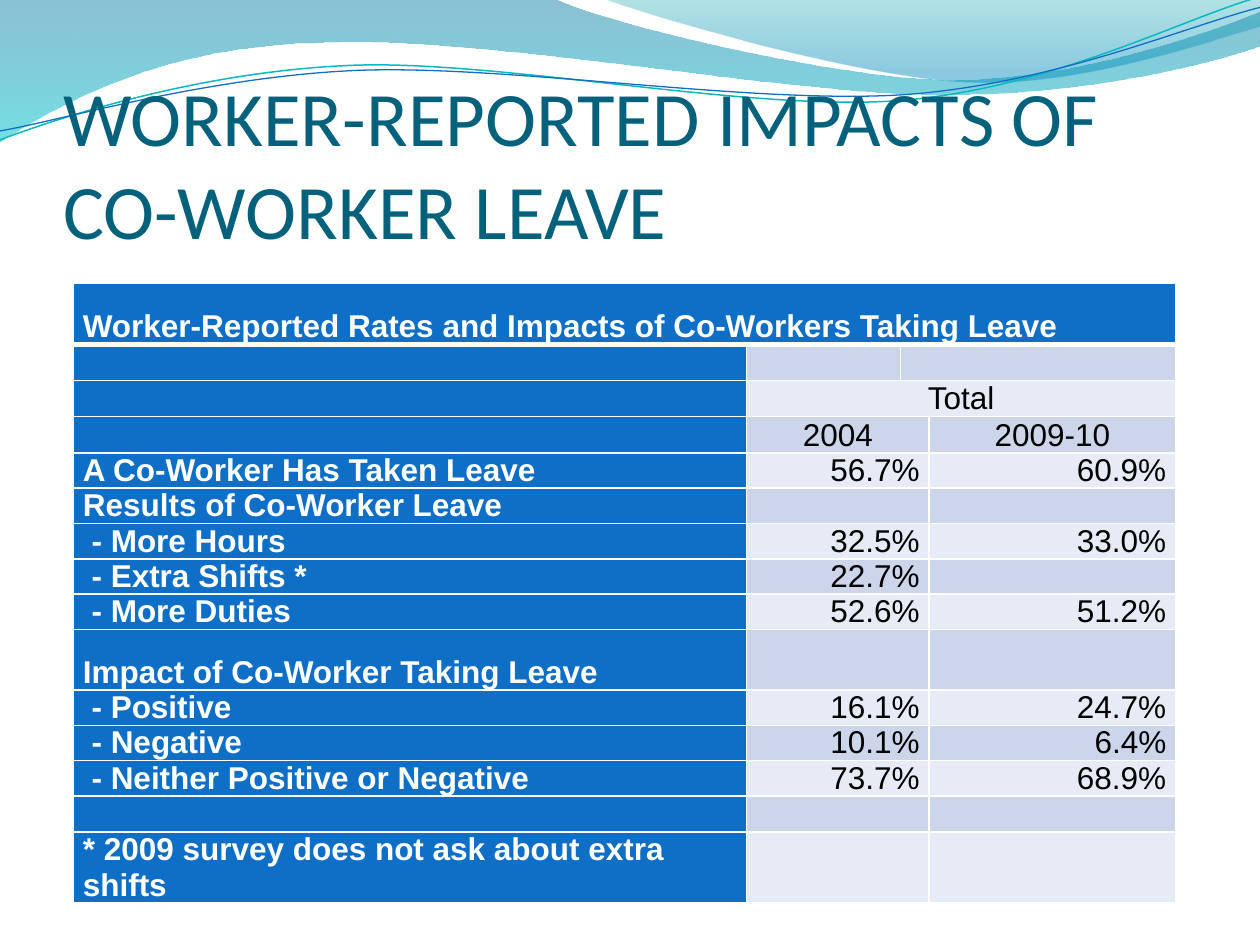
import lxml.etree
import pptx
import pptx.dml.color
import pptx.enum.text
import pptx.oxml.ns
import pptx.util

Cm, Pt = pptx.util.Cm, pptx.util.Pt
ALIGN = pptx.enum.text.PP_ALIGN
ANCHOR = pptx.enum.text.MSO_ANCHOR
qn = pptx.oxml.ns.qn

BLUE, WHITE, BLACK = "0F6FC6", "FFFFFF", "000000"
BANDS = ("E7EBF5", "CCD5EA")

# Outlines in cm: a pair is a straight step, six numbers are a Bezier curve.
FILLED_WAVES = [
    {"outline": [(0, -0.03), (11.18, -0.03),
                 (12.09, 0.43, 16.87, 1.6, 19.25, 1.6),
                 (21.67, 1.6, 24.33, 0.66, 25.4, 0.23), (25.43, 0.91),
                 (24.97, 1.12, 22.1, 1.93, 18.95, 1.91),
                 (15.8, 1.91, 9.7, 0.71, 6.53, 0.86),
                 (3.28, 0.89, 1.17, 2.11, -0.03, 2.87)],
     "stops": [(0, "0074A1", 45), (1, "00C6CF", 55)]},
    {"outline": [(12.17, -0.03),
                 (12.93, 0.28, 17.32, 1.57, 19.53, 1.65),
                 (21.74, 1.75, 24.41, 0.81, 25.4, 0.53), (25.4, 0)],
     "stops": [(0, "00A1A9", 30), (0.8, "008BBF", 45)]},
]
WAVE_LINES = [
    {"outline": [(0, 2.82), (1.22, 2.36, 4.01, 1.45, 7.04, 1.32),
                 (10.03, 1.19, 15.06, 2.26, 18.11, 2.03),
                 (21.16, 1.8, 23.83, 0.38, 25.35, -0.05)],
     "color": "0AB8BF", "width": 0.85},
    {"outline": [(0, 2.64), (1.19, 2.44, 4.17, 1.55, 7.19, 1.42),
                 (10.24, 1.3, 15.16, 2.11, 18.21, 1.91),
                 (21.23, 1.7, 23.9, 0.53, 25.4, 0.15)],
     "color": BLUE, "width": 0.75},
]

COLUMN_WIDTHS = (13.57, 3.1, 0.58, 4.97)
LOW_ROW, TALL_ROW, UNLABELLED_ROW = 0.69, 1.22, 0.73
TALL_ROWS = (0, 9, 14)
ROWS = [
    ("Worker-Reported Rates and Impacts of Co-Workers Taking Leave", "", ""),
    ("", "", ""),
    ("", "Total", ""),
    ("", "2004", "2009-10"),
    ("A Co-Worker Has Taken Leave", "56.7%", "60.9%"),
    ("Results of Co-Worker Leave", "", ""),
    (" - More Hours", "32.5%", "33.0%"),
    (" - Extra Shifts *", "22.7%", ""),
    (" - More Duties", "52.6%", "51.2%"),
    ("Impact of Co-Worker Taking Leave", "", ""),
    (" - Positive", "16.1%", "24.7%"),
    (" - Negative", "10.1%", "6.4%"),
    (" - Neither Positive or Negative", "73.7%", "68.9%"),
    ("", "", ""),
    ("* 2009 survey does not ask about extra shifts", "", ""),
]
# First and last column of the merged cells; other rows join columns 1 and 2.
MERGES = {0: (0, 3), 1: (2, 3), 2: (1, 3)}


def rgb(code):
    return pptx.dml.color.RGBColor.from_string(code)


def set_values(target, values):
    for name, value in values.items():
        setattr(target, name, value)


def add_outline(page, box, outline, close):
    """Build the polygon of all points, then turn its curve steps into Beziers."""
    left, top = box[:2]
    points = [(Cm(left + step[i]), Cm(top + step[i + 1]))
              for step in outline for i in range(0, len(step), 2)]
    builder = page.shapes.build_freeform(*points[0])
    builder.add_line_segments(points[1:], close=close)
    shape = builder.convert_to_shape()
    shape.shadow.inherit = False
    segments = iter(list(shape._element.spPr.iter(qn("a:lnTo"))))
    for step in outline[1:]:
        curve = next(segments)
        if len(step) == 6:
            curve.tag = qn("a:cubicBezTo")
            for extra in (next(segments), next(segments)):
                curve.append(extra[0])
                extra.getparent().remove(extra)
    return shape


def add_waves(page, box):
    for wave in FILLED_WAVES:
        shape = add_outline(page, box, wave["outline"], True)
        shape.line.fill.background()
        shape.fill.gradient()
        shape.fill.gradient_angle = 270
        for stop, (position, code, opacity) in zip(shape.fill.gradient_stops, wave["stops"]):
            stop.position = position
            stop.color.rgb = rgb(code)
        colors = shape._element.spPr.iter(qn("a:srgbClr"))
        for color, (position, code, opacity) in zip(list(colors), wave["stops"]):
            lxml.etree.SubElement(color, qn("a:alpha"), val=str(opacity * 1000))
    for wave in WAVE_LINES:
        shape = add_outline(page, box, wave["outline"], False)
        shape.fill.background()
        shape.line.color.rgb = rgb(wave["color"])
        shape.line.width = Pt(wave["width"])


def place_title(page, box, text):
    title = page.shapes.title
    set_values(title, dict(zip(("left", "top", "width", "height"), map(Cm, box))))
    frame = title.text_frame
    set_values(frame, {"margin_left": 0, "margin_right": 0, "margin_top": Cm(0.13),
                       "margin_bottom": 0, "word_wrap": True,
                       "vertical_anchor": ANCHOR.BOTTOM,
                       "auto_size": pptx.enum.text.MSO_AUTO_SIZE.NONE})
    para = frame.paragraphs[0]
    para.alignment = ALIGN.LEFT
    span = para.add_run()
    span.text = text
    set_values(span.font, {"name": "Calibri", "size": Pt(44)})
    span.font.color.rgb = rgb("04617B")
    page.shapes._spTree.append(title._element)  # bring in front of the waves


def set_borders(cell, widths):
    properties = cell._tc.get_or_add_tcPr()
    for index, (side, width) in enumerate(widths.items()):
        line = lxml.etree.Element(qn("a:ln" + side), w=str(Pt(width)))
        fill = lxml.etree.SubElement(line, qn("a:solidFill"))
        lxml.etree.SubElement(fill, qn("a:srgbClr"), val=WHITE)
        properties.insert(index, line)


def fill_cell(cell, text, color, align, bold):
    set_values(cell, {"margin_left": Cm(0.19), "margin_right": Cm(0.19), "margin_top": 0,
                      "margin_bottom": 0, "vertical_anchor": ANCHOR.BOTTOM})
    para = cell.text_frame.paragraphs[0]
    para.alignment = align
    if text:
        span = para.add_run()
        span.text = text
        set_values(span.font, {"name": "Arial", "size": Pt(18), "bold": bold})
        span.font.color.rgb = rgb(color)
    else:
        ending = lxml.etree.SubElement(para._p, qn("a:endParaRPr"), sz="1800")
        lxml.etree.SubElement(ending, qn("a:latin"), typeface="Arial")


def add_leave_table(page, box):
    frame = page.shapes.add_table(len(ROWS), len(COLUMN_WIDTHS), *map(Cm, box))
    table = frame.table
    for column, width in zip(table.columns, COLUMN_WIDTHS):
        column.width = Cm(width)
    for r, (label, first, second) in enumerate(ROWS):
        height = TALL_ROW if r in TALL_ROWS else LOW_ROW if label else UNLABELLED_ROW
        table.rows[r].height = Cm(height)
        start, end = MERGES.get(r, (1, 2))
        table.cell(r, start).merge(table.cell(r, end))
        for c, text in enumerate((label, first, "", second)):
            cell = table.cell(r, c)
            heading = c == 0
            align = ALIGN.LEFT if heading else ALIGN.CENTER if r < 4 else ALIGN.RIGHT
            fill_cell(cell, text, WHITE if heading else BLACK, align, heading)
            cell.fill.solid()
            cell.fill.fore_color.rgb = rgb(BLUE if heading or r == 0 else BANDS[r % 2])
            set_borders(cell, {"L": 1, "R": 1, "T": 3 if r == 1 else 1,
                               "B": 3 if r == 0 else 1})
    frame.height = Cm(box[3])


def main():
    deck = pptx.Presentation()
    deck.slide_width, deck.slide_height = Cm(25.4), Cm(19.05)
    page = deck.slides.add_slide(deck.slide_layouts[5])
    add_waves(page, (0, 0, 25.4, 2.87))
    place_title(page, (1.27, 2.34, 22.86, 2.79),
                "WORKER-REPORTED IMPACTS OF CO-WORKER LEAVE")
    add_leave_table(page, (1.48, 5.72, 22.22, 12.83))
    deck.save("out.pptx")


if __name__ == "__main__":
    main()
